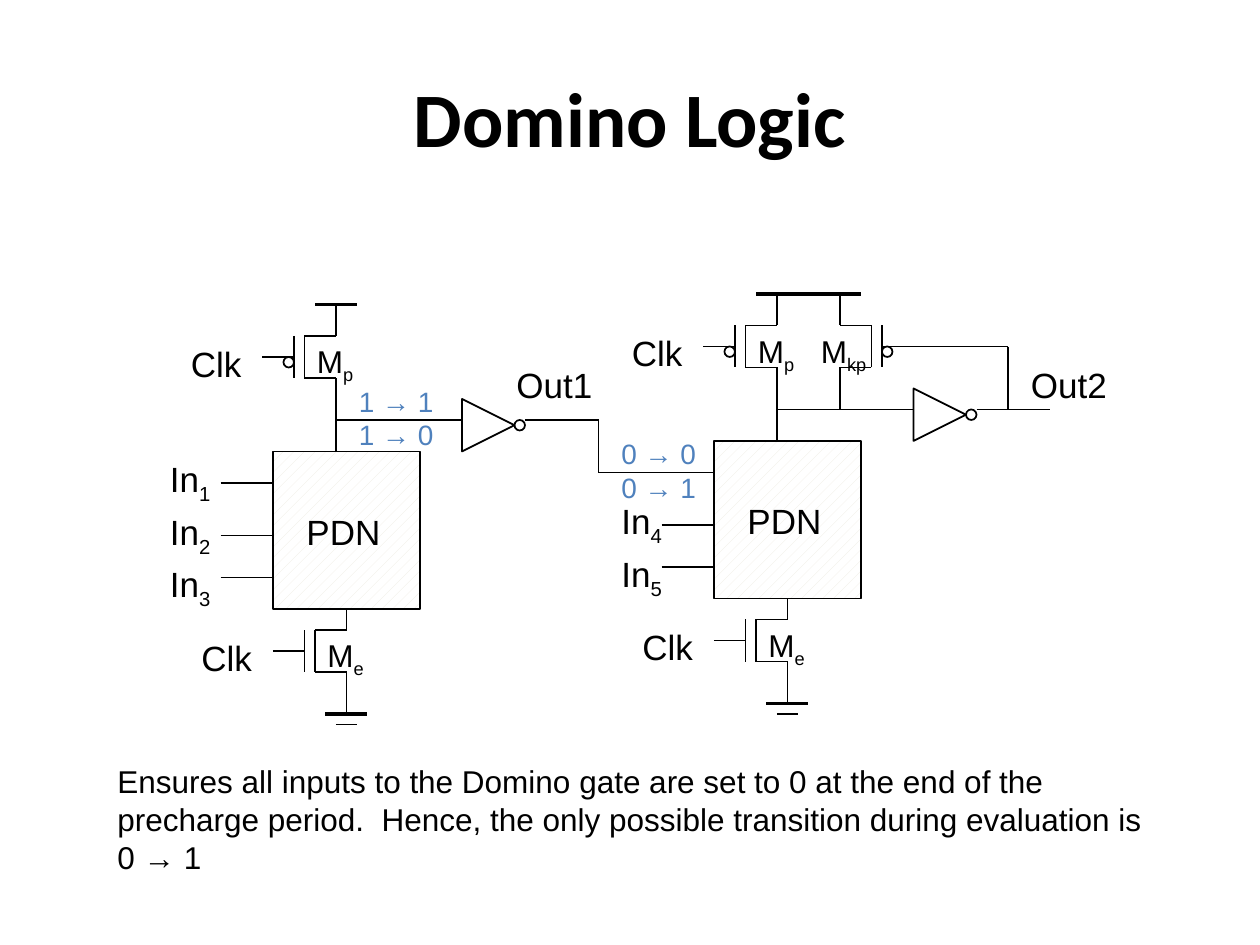
from lxml import etree
from pptx import Presentation
from pptx.dml.color import RGBColor
from pptx.enum.dml import MSO_PATTERN
from pptx.enum.shapes import MSO_CONNECTOR, MSO_SHAPE
from pptx.enum.text import MSO_ANCHOR, MSO_AUTO_SIZE, PP_ALIGN
from pptx.oxml.ns import qn
from pptx.util import Emu, Pt

PX = 7620  # EMU per px, 120 px to the inch
BLACK = RGBColor(0x00, 0x00, 0x00)
WHITE = RGBColor(0xFF, 0xFF, 0xFF)
BLUE = RGBColor(0x4F, 0x81, 0xBD)
HATCH = RGBColor(0xEE, 0xEC, 0xE1)
STRAIGHT = MSO_CONNECTOR.STRAIGHT
RECTANGLE, OVAL = MSO_SHAPE.RECTANGLE, MSO_SHAPE.OVAL
TRIANGLE = MSO_SHAPE.ISOSCELES_TRIANGLE
THIN, THICK = 1, 2.25

# Content: origin is the top left corner of each pull-down network (PDN)
TITLE = "Domino Logic"
NOTE = ("Ensures all inputs to the Domino gate are set to 0 at the end of the "
        "precharge period.  Hence, the only possible transition during "
        "evaluation is 0 → 1")
STAGES = [
    {"origin": (260, 430), "supply_end": 340, "inverter_x": 440,
     "inputs": ["1", "2", "3"], "input_x": 150},
    {"origin": (680, 420), "supply_end": 820, "inverter_x": 870,
     "inputs": [None, "4", "5"], "input_x": 580},
]
KEEPER = (830, 310)
# Text, subscript, left, top, width, height, size
LABELS = [
    ("Out1", "", 480, 340, 96, 52, 20),
    ("Out2", "", 970, 340, 96, 52, 20),
    ("M", "kp", 770, 310, 71, 48, 18),
]
# Lines of text, left, top
TRANSITIONS = [
    (["1 → 1", "1 → 0"], 330, 360),
    (["0 → 0", "0 → 1"], 580, 410),
]
WIRES = [
    # first output to second stage
    (500, 400, 570, 400), (570, 400, 570, 450), (570, 450, 630, 450),
    # second output and feedback to the keeper
    (930, 390, 1000, 390), (800, 380, 800, 390),
    (960, 330, 960, 390), (860, 330, 960, 330),
]
# Offsets from the top of the channel
TRANSISTOR = [
    (0, 0, 30, 0), (0, 0, 0, 40), (0, 40, 30, 40), (-10, 0, -10, 40),
    (30, 40, 30, 70), (-40, 20, -10, 20), (30, -30, 30, 0),
]
# Offsets from the middle of the main bar, with line width
GROUND = [(-20, 0, 20, 0, THICK), (-10, 10, 10, 10, THIN), (0, -30, 0, 0, THIN)]
INPUT_WIRES = (30, 80, 120)

presentation = Presentation()
presentation.slide_width = Emu(1200 * PX)
presentation.slide_height = Emu(900 * PX)
slide = presentation.slides.add_slide(presentation.slide_layouts[6])


def scaled(*lengths):
    return [Emu(length * PX) for length in lengths]


def add_line(x1, y1, x2, y2, width=THIN):
    connector = slide.shapes.add_connector(STRAIGHT, *scaled(x1, y1, x2, y2))
    connector.line.color.rgb = BLACK
    connector.line.width = Pt(width)
    etree.SubElement(connector._element.spPr, qn("a:effectLst"))


def add_outline(kind, left, top, width, height, rotation=0):
    shape = slide.shapes.add_shape(kind, *scaled(left, top, width, height))
    shape.shadow.inherit = False
    shape.rotation = rotation
    shape.fill.background()
    shape.line.color.rgb = BLACK
    shape.line.width = Pt(THIN)
    return shape


def add_text(lines, left, top, width, height, size, subscript="",
             color=BLACK, font="Arial", wrap=False):
    box = slide.shapes.add_textbox(*scaled(left, top, width, height))
    frame = box.text_frame
    frame.word_wrap = wrap
    frame.auto_size = MSO_AUTO_SIZE.SHAPE_TO_FIT_TEXT
    for index, line in enumerate(lines):
        paragraph = frame.paragraphs[0] if index == 0 else frame.add_paragraph()
        paragraph.font.size = Pt(size)
        paragraph.font.name = font
        paragraph.font.color.rgb = color
        paragraph.add_run().text = line
        if subscript:
            run = paragraph.add_run()
            run.text = subscript
            run._r.get_or_add_rPr().set("baseline", "-25000")
    return frame


def add_transistor(x, y, bubble=False, direction=1):
    for x1, y1, x2, y2 in TRANSISTOR:
        add_line(x + direction * x1, y + y1, x + direction * x2, y + y2)
    if bubble:
        add_outline(OVAL, x - 5 - direction * 15, y + 20, 10, 10)


def add_inverter(x, y):
    add_outline(TRIANGLE, x, y, 50, 50, 90)
    add_outline(OVAL, x + 50, y + 20, 10, 10, 90)


def add_stage(stage):
    x, y = stage["origin"]
    precharge = (x + 30, y - 110)
    evaluate = (x + 40, y + 170)
    output_x, output_y = x + 60, y - 30

    # Devices, ground and supply
    add_transistor(*evaluate)
    add_transistor(*precharge, bubble=True)
    for x1, y1, x2, y2, width in GROUND:
        add_line(x + 70 + x1, y + 250 + y1, x + 70 + x2, y + 250 + y2, width)
    add_line(x + 40, y - 140, stage["supply_end"], y - 140, THICK)

    # Pull-down network
    network = add_outline(RECTANGLE, x, y, 140, 150)
    network.fill.patterned()
    network.fill.pattern = MSO_PATTERN.PERCENT_20
    network.fill.fore_color.rgb = HATCH
    network.fill.back_color.rgb = WHITE
    add_text(["PDN"], x + 20, y + 50, 95, 52, 20)

    # Inputs
    for index, (wire_y, name) in enumerate(zip(INPUT_WIRES, stage["inputs"])):
        add_line(x - 50, y + wire_y, x, y + wire_y)
        if name:
            add_text(["In"], stage["input_x"], y + 50 * index, 64, 52, 20, name)

    # Device names and clocks
    for (left, top), name in ((evaluate, "e"), (precharge, "p")):
        add_text(["M"], left, top, 60, 48, 18, name)
        add_text(["Clk"], left - 120, top, 72, 52, 20)

    # Output node and inverter
    add_line(output_x, y - 50, output_x, y)
    add_line(output_x, output_y, stage["inverter_x"], output_y)
    add_inverter(stage["inverter_x"], y - 50)


# Title
title = add_text([TITLE], 60, 36, 1080, 150, 44, font="Calibri", wrap=True)
title.auto_size = MSO_AUTO_SIZE.NONE
title.vertical_anchor = MSO_ANCHOR.MIDDLE
title.paragraphs[0].alignment = PP_ALIGN.CENTER
title.paragraphs[0].font.bold = True

# Circuit
for stage in STAGES:
    add_stage(stage)
add_transistor(*KEEPER, bubble=True, direction=-1)
for wire in WIRES:
    add_line(*wire)

# Signal labels and note
for text, subscript, left, top, width, height, size in LABELS:
    add_text([text], left, top, width, height, size, subscript)
for lines, left, top in TRANSITIONS:
    add_text(lines, left, top, 95, 77, 16, color=BLUE)
add_text([NOTE], 100, 720, 1020, 121, 18, wrap=True)

presentation.save("out.pptx")
